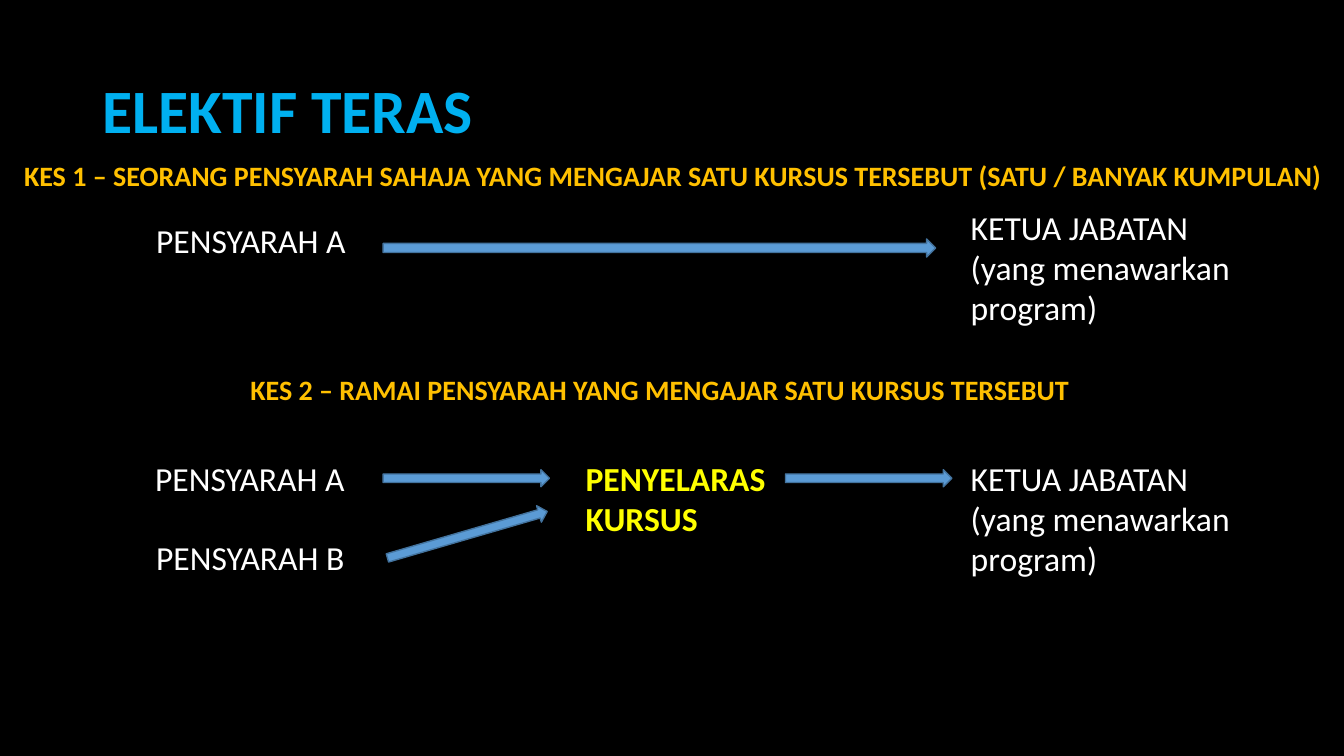
"""Build the ELEKTIF TERAS slide showing two reporting cases."""
from dataclasses import dataclass

from pptx import Presentation
from pptx import util as u
from pptx.dml.color import RGBColor
from pptx.enum import shapes, text


@dataclass(frozen=True)
class Theme:
    font: str = "Calibri"
    background: str = "000000"
    title: str = "00B0F0"
    case: str = "FFC000"
    body: str = "FFFFFF"
    coordinator: str = "FFFF00"
    arrow: str = "5B9BD5"
    arrow_line: str = "43739E"
    title_size: int = 44
    case_size: int = 20
    body_size: int = 24


theme = Theme()


def add_text(parent, box, lines, size, color, bold=False, align=text.PP_ALIGN.LEFT):
    """Add an unwrapped text box with one paragraph per line."""
    tb = parent.shapes.add_textbox(*map(u.Inches, box))
    tf = tb.text_frame
    tf.word_wrap = False
    tf.auto_size = text.MSO_AUTO_SIZE.SHAPE_TO_FIT_TEXT
    tf.text = "\n".join(lines)
    for p in tf.paragraphs:
        p.alignment = align
        p.font.name = theme.font
        p.font.size = u.Pt(size)
        p.font.bold = bold
        p.font.color.rgb = RGBColor.from_string(color)
    return tf


def add_arrow(parent, box, rotation=0):
    """Add a block arrow pointing right, turned by rotation degrees."""
    sp = parent.shapes.add_shape(shapes.MSO_SHAPE.RIGHT_ARROW, *map(u.Inches, box))
    sp.rotation = rotation
    sp.shadow.inherit = False
    sp.fill.solid()
    sp.fill.fore_color.rgb = RGBColor.from_string(theme.arrow)
    sp.line.color.rgb = RGBColor.from_string(theme.arrow_line)
    sp.line.width = u.Pt(1)


prs = Presentation()
prs.slide_width, prs.slide_height = u.Inches(13.33), u.Inches(7.5)
s = prs.slides.add_slide(prs.slide_layouts[6])
s.background.fill.solid()
s.background.fill.fore_color.rgb = RGBColor.from_string(theme.background)

title = add_text(s, (0.92, 0.4, 11.5, 1.45), ["ELEKTIF TERAS"],
                 theme.title_size, theme.title, bold=True)
title.word_wrap = True
title.auto_size = text.MSO_AUTO_SIZE.NONE
title.vertical_anchor = text.MSO_ANCHOR.MIDDLE
title.paragraphs[0].line_spacing = 0.9

head = ["KETUA JABATAN", "(yang menawarkan", "program)"]
case_1 = s.shapes.add_group_shape()
case_2 = s.shapes.add_group_shape()

for group, box, lines in [
    (case_1, (1.45, 2.13, 2.1, 0.5), ["PENSYARAH A"]),
    (case_1, (9.53, 2, 2.8, 1.31), head),
    (case_2, (1.44, 4.49, 2.1, 0.5), ["PENSYARAH A"]),
    (case_2, (1.45, 5.28, 2.09, 0.5), ["PENSYARAH B"]),
    (case_2, (9.53, 4.49, 2.87, 1.31), head),
]:
    add_text(group, box, lines, theme.body_size, theme.body)
add_text(case_2, (5.71, 4.49, 2.08, 0.91), ["PENYELARAS", "KURSUS"],
         theme.body_size, theme.coordinator, bold=True)

add_arrow(case_1, (3.8, 2.37, 5.48, 0.18))
for left, top, rotation in [(3.8, 4.66, 0), (3.81, 5.22, 343.8), (7.79, 4.66, 0)]:
    add_arrow(case_2, (left, top, 1.65, 0.17), rotation)

for box, heading, align in [
    ((0.14, 1.52, 13.23, 0.44),
     "KES 1 – SEORANG PENSYARAH SAHAJA YANG MENGAJAR SATU KURSUS TERSEBUT "
     "(SATU / BANYAK KUMPULAN)", text.PP_ALIGN.LEFT),
    ((2.35, 3.65, 8.39, 0.44),
     "KES 2 – RAMAI PENSYARAH YANG MENGAJAR SATU KURSUS TERSEBUT",
     text.PP_ALIGN.CENTER),
]:
    add_text(s, box, [heading], theme.case_size, theme.case, bold=True, align=align)

prs.save("out.pptx")
